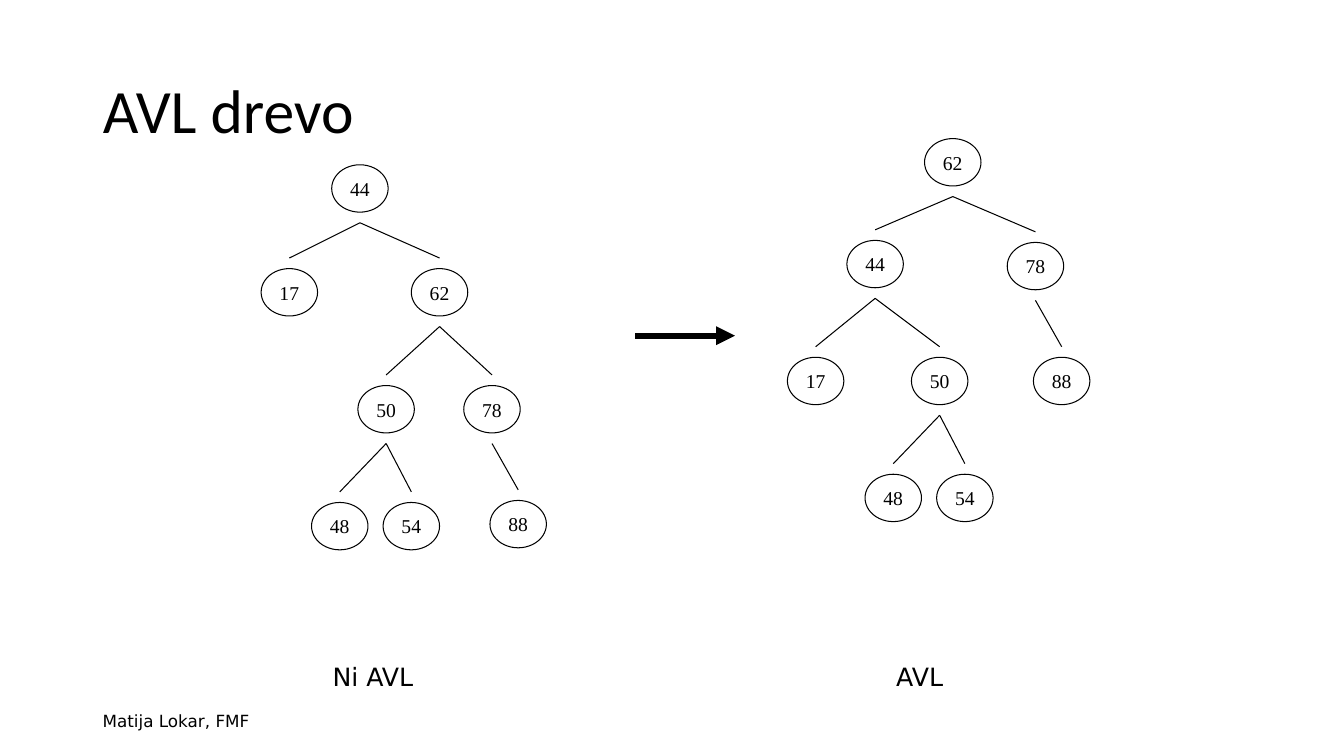
from dataclasses import dataclass

from lxml.etree import SubElement
from pptx import Presentation
from pptx.dml.color import RGBColor
from pptx.enum.shapes import MSO_CONNECTOR as Connector, MSO_SHAPE as Shape
from pptx.enum.text import MSO_ANCHOR as Anchor, PP_ALIGN as Align
from pptx.oxml.ns import qn
from pptx.util import Emu, Pt

# Content: each node is value: (centre x, centre y, parent value)
TITLE = "AVL drevo"
AUTHOR = "Matija Lokar, FMF"
TREES = [
    {
        "44": (357, 187, None),
        "17": (287, 290, "44"),
        "62": (436, 290, "44"),
        "50": (383, 406, "62"),
        "78": (488, 406, "62"),
        "48": (337, 522, "50"),
        "54": (408, 522, "50"),
        "88": (514, 520, "78"),
    },
    {
        "62": (945, 161, None),
        "44": (868, 262, "62"),
        "78": (1027, 264, "62"),
        "17": (809, 378, "44"),
        "50": (932, 378, "44"),
        "88": (1053, 378, "78"),
        "48": (886, 494, "50"),
        "54": (957, 494, "50"),
    },
]
CAPTIONS = [("Ni AVL", 320, 134), ("AVL", 879, 102)]

# Geometry in px, 100 to the inch
SCALE = 9144
SLIDE_SIZE = (1333, 750)
NODE_WIDTH, NODE_HEIGHT = 56, 47
EDGE_GAP = 34  # from a node's centre to the end of its edges


@dataclass(frozen=True)
class Theme:
    ink: RGBColor = RGBColor(0, 0, 0)
    title_font: str = "Calibri"
    body_font: str = "DejaVu Sans"
    node_font: str = "Times New Roman"
    title_size: int = 44
    caption_size: int = 18
    node_size: int = 14
    author_size: int = 12
    thin: float = 0.75
    thick: float = 4.5


THEME = Theme()


def px(*lengths):
    return [Emu(length * SCALE) for length in lengths]


def write(shape, text, *, font, size, align=Align.LEFT, anchor=Anchor.MIDDLE,
          wrap=True, line_spacing=None):
    frame = shape.text_frame
    frame.word_wrap = wrap
    frame.vertical_anchor = anchor
    paragraph = frame.paragraphs[0]
    paragraph.alignment = align
    paragraph.line_spacing = line_spacing
    run = paragraph.add_run()
    run.text = text
    run.font.name = font
    run.font.size = Pt(size)
    run.font.color.rgb = THEME.ink


def add_line(shapes, start, end, width):
    line = shapes.add_connector(Connector.STRAIGHT, *px(*start, *end))
    line.line.color.rgb = THEME.ink
    line.line.width = Pt(width)
    SubElement(line._element.spPr, qn("a:effectLst"))
    return line


def add_node(shapes, value, x, y):
    node = shapes.add_shape(Shape.OVAL, *px(x - NODE_WIDTH / 2, y - NODE_HEIGHT / 2,
                                            NODE_WIDTH, NODE_HEIGHT))
    node.shadow.inherit = False
    node.fill.background()
    node.line.color.rgb = THEME.ink
    node.line.width = Pt(THEME.thin)
    write(node, value, font=THEME.node_font, size=THEME.node_size,
          align=Align.CENTER, wrap=False)


def add_tree(shapes, tree):
    for value, (x, y, parent) in tree.items():
        add_node(shapes, value, x, y)
        if parent:
            parent_x, parent_y, _ = tree[parent]
            add_line(shapes, (parent_x, parent_y + EDGE_GAP), (x, y - EDGE_GAP), THEME.thin)


def main():
    presentation = Presentation()
    presentation.slide_width, presentation.slide_height = px(*SLIDE_SIZE)
    slide = presentation.slides.add_slide(presentation.slide_layouts[5])
    shapes = slide.shapes

    # Title and author
    title = shapes.title
    title.left, title.top, title.width, title.height = px(92, 40, 1150, 145)
    write(title, TITLE, font=THEME.title_font, size=THEME.title_size, line_spacing=0.9)
    author = shapes.add_textbox(*px(92, 695, 300, 40))
    write(author, AUTHOR, font=THEME.body_font, size=THEME.author_size)

    # Trees
    for tree in TREES:
        add_tree(shapes, tree)

    # Arrow from the unbalanced tree to the balanced one
    arrow = add_line(shapes, (630, 333), (729, 333), THEME.thick)
    SubElement(arrow.line._get_or_add_ln(), qn("a:tailEnd"), type="triangle")

    # Captions
    for text, left, width in CAPTIONS:
        caption = shapes.add_textbox(*px(left, 651, width, 40))
        write(caption, text, font=THEME.body_font, size=THEME.caption_size, anchor=Anchor.TOP)

    presentation.save("out.pptx")


if __name__ == "__main__":
    main()
